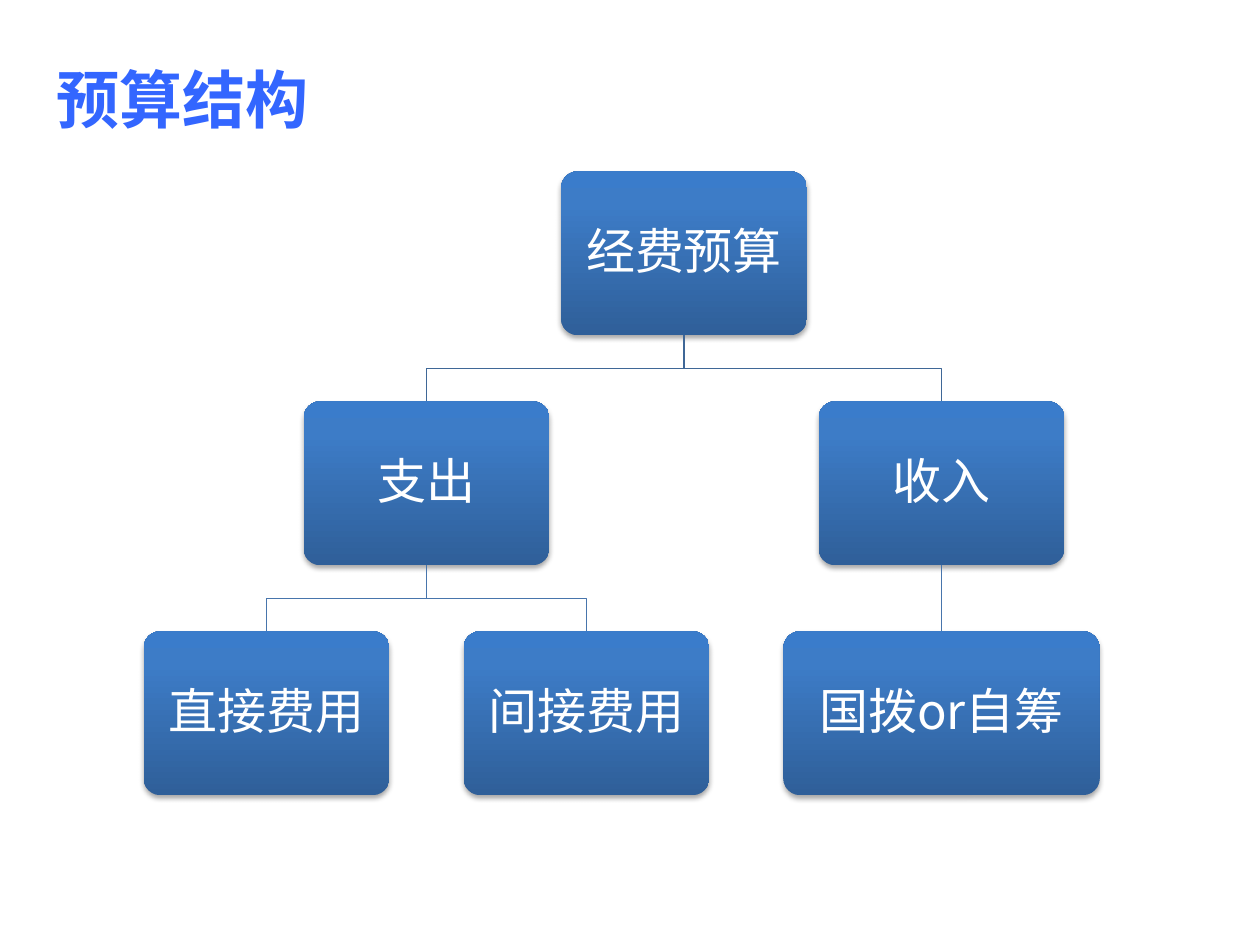
from copy import deepcopy

from lxml import etree
from pptx import Presentation
from pptx.dml.color import RGBColor
from pptx.enum.shapes import MSO_CONNECTOR, MSO_SHAPE
from pptx.enum.text import MSO_ANCHOR, PP_ALIGN
from pptx.oxml.ns import qn
from pptx.util import Pt

ROUNDED = MSO_SHAPE.ROUNDED_RECTANGLE
STRAIGHT = MSO_CONNECTOR.STRAIGHT
CENTER, LEFT = PP_ALIGN.CENTER, PP_ALIGN.LEFT
MIDDLE, TOP = MSO_ANCHOR.MIDDLE, MSO_ANCHOR.TOP

FONT = "Noto Sans CJK SC"
COLORS = {
    "title": "3366FF",
    "label": "FFFFFF",
    "node_dark": "2F5F99",
    "node_mid": "3D7CC7",
    "node_light": "3A7CCB",
    "shadow": "000000",
    "link_0": "3F6797",
    "link_1": "4875AC",
}
NODE_STOPS = [(0, "node_dark"), (0.8, "node_mid"), (1, "node_light")]
NODE_W, NODE_H = 140.4, 93.6
GAP_X, PITCH_Y = 42.4, 131.4
TREE = ("经费预算", NODE_W, [
    ("支出", NODE_W, [("直接费用", NODE_W, []), ("间接费用", NODE_W, [])]),
    ("收入", NODE_W, [("国拨or自筹", 180.6, [])]),
])


def rgb(name):
    """Return the named colour."""
    return RGBColor.from_string(COLORS[name])


def write(sp, text, size, color, bold=False, align=LEFT, anchor=TOP, spacing=1.0, inset=None):
    """Write one formatted paragraph into a shape."""
    tf = sp.text_frame
    tf.word_wrap = True
    tf.vertical_anchor = anchor
    if inset is not None:
        tf.margin_left = tf.margin_right = tf.margin_top = tf.margin_bottom = Pt(inset)
    p = tf.paragraphs[0]
    p.alignment, p.line_spacing = align, spacing
    r = p.add_run()
    r.text = text
    r.font.size, r.font.bold, r.font.name = Pt(size), bold, FONT
    r.font.color.rgb = rgb(color)
    etree.SubElement(r.font._element, qn("a:ea"), typeface=FONT)


def fill_node(sp):
    """Give a node its vertical three-stop gradient."""
    sp.fill.gradient()
    sp.fill.gradient_angle = 90
    stops = sp._element.spPr.find(".//" + qn("a:gsLst"))
    stops.append(deepcopy(stops[-1]))
    for stop, (position, color) in zip(sp.fill.gradient_stops, NODE_STOPS):
        stop.position = position
        stop.color.rgb = rgb(color)


def drop_shadow(sp):
    """Replace the theme shadow with a soft one straight below."""
    sp.shadow.inherit = False
    effects = sp._element.spPr.find(qn("a:effectLst"))
    shadow = etree.SubElement(effects, qn("a:outerShdw"), blurRad=str(Pt(3.1)),
                              dist=str(Pt(1.8)), dir="5400000", rotWithShape="0")
    color = etree.SubElement(shadow, qn("a:srgbClr"), val=COLORS["shadow"])
    etree.SubElement(color, qn("a:alpha"), val="35000")


def add_node(slide, text, x, y, w, h):
    """Draw one labelled node."""
    sp = slide.shapes.add_shape(ROUNDED, Pt(x), Pt(y), Pt(w), Pt(h))
    sp.adjustments[0] = 0.1
    fill_node(sp)
    sp.line.fill.background()
    drop_shadow(sp)
    write(sp, text, 28, "label", align=CENTER, anchor=MIDDLE, spacing=0.9, inset=8.64)
    return sp


def add_link(slide, parent, child, color):
    """Join a parent to a child, bending halfway when they are not aligned."""
    x1, y1 = parent.left + parent.width // 2, parent.top + parent.height
    x2, y2 = child.left + child.width // 2, child.top
    if abs(x1 - x2) < Pt(1):
        link = slide.shapes.add_connector(STRAIGHT, x1, y1, x2, y2)
        link.begin_connect(parent, 2)
        link.end_connect(child, 0)
        etree.SubElement(link._element.spPr, qn("a:effectLst"))
    else:
        middle = (y1 + y2) // 2
        builder = slide.shapes.build_freeform(x1, y1)
        builder.add_line_segments([(x1, middle), (x2, middle), (x2, y2)], close=False)
        link = builder.convert_to_shape()
        link.fill.background()
        link.shadow.inherit = False
    link.line.color.rgb = rgb(color)
    link.line.width = Pt(0.75)


def add_tree(slide, tree, x, y, level=0):
    """Draw a tree from its left top corner; return its root, centre and right edge."""
    text, w, branches = tree
    children, centers, right = [], [], x - GAP_X
    for branch in branches:
        child, center, right = add_tree(slide, branch, right + GAP_X, y + PITCH_Y, level + 1)
        children.append(child)
        centers.append(center)
    center = sum(centers) / len(centers) if centers else x + w / 2
    node = add_node(slide, text, center - w / 2, y, w, NODE_H)
    for child in children:
        add_link(slide, node, child, f"link_{level}")
    return node, center, max(right, center + w / 2)


def add_title(slide, text, x, y, w, h):
    """Place the slide title."""
    sp = slide.shapes.add_textbox(Pt(x), Pt(y), Pt(w), Pt(h))
    write(sp, text, 36, "title", bold=True, spacing=1.25)


def main():
    """Build and save the slide."""
    prs = Presentation()
    prs.slide_width, prs.slide_height = Pt(720), Pt(540)
    slide = prs.slides.add_slide(prs.slide_layouts[6])
    add_title(slide, "预算结构", 25.2, 20.2, 487.4, 56.9)
    add_tree(slide, TREE, 82.1, 98)
    prs.save("out.pptx")


if __name__ == "__main__":
    main()
